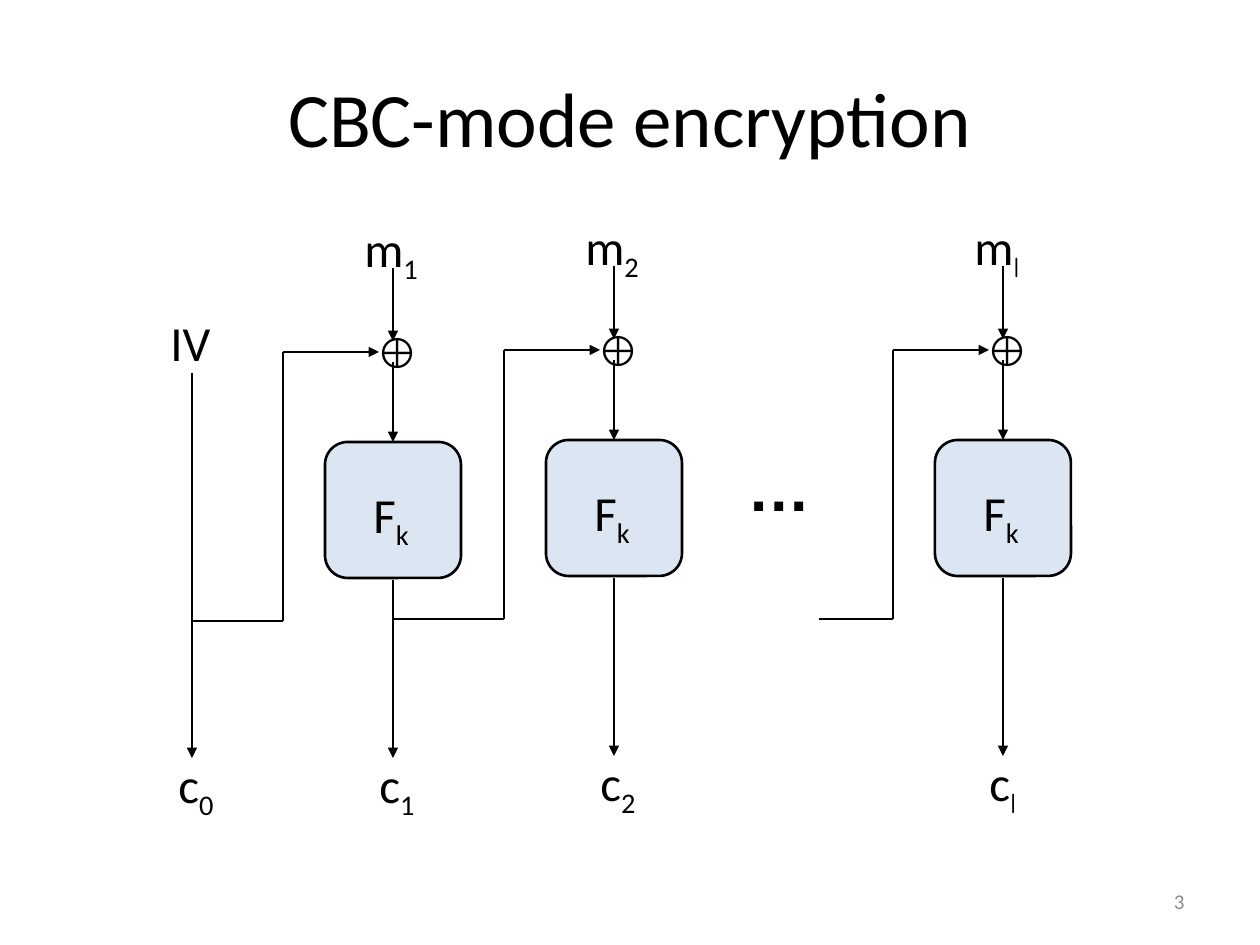
from lxml.etree import SubElement
from pptx import Presentation
from pptx.dml.color import RGBColor
from pptx.enum.shapes import MSO_CONNECTOR as Connector, MSO_SHAPE as Shape
from pptx.enum.text import MSO_ANCHOR as Anchor, MSO_AUTO_SIZE as AutoSize, PP_ALIGN as Align
from pptx.oxml.ns import qn
from pptx.util import Pt

TITLE = "CBC-mode encryption"
BLACK, BLUE, GREY = "000000", "DCE6F2", "8C8C8C"
INITIAL_X, INITIAL_DROP = 192, 2
BLOCKS = [
    {"index": "1", "axis": 393, "source": INITIAL_X, "drop": INITIAL_DROP, "font": "Calibri", "widths": (82, 63)},
    {"index": "2", "axis": 614, "source": 393, "drop": 0, "font": "Calibri", "widths": (82, 63)},
    {"index": "l", "axis": 1003, "source": 819, "drop": 0, "font": "Comic Neue", "widths": (76, 58)},
]
SIDE, BOX_TOP, OUTPUT_END = 136, 440, 756
FEED_LOW, FEED_HIGH, RISER_GAP = 619, 350, 110


def px(value):
    return round(value * 914400 / 126)


def color(code):
    return RGBColor.from_string(code)


def write(frame, text, sub="", sub_font="Calibri", size=28, font="Calibri",
          ink=BLACK, bold=False, align=Align.LEFT):
    para = frame.paragraphs[0]
    para.alignment = align
    for part, face, baseline in ((text, font, None), (sub, sub_font, "-25000")):
        if not part:
            continue
        span = para.add_run()
        span.text = part
        span.font.name = face
        span.font.size = Pt(size)
        span.font.bold = bold
        span.font.color.rgb = color(ink)
        if baseline:
            span.font._element.set("baseline", baseline)


def label(slide, x, y, width, height, text, **style):
    frame = slide.shapes.add_textbox(px(x), px(y), px(width), px(height)).text_frame
    frame.word_wrap = False
    frame.auto_size = AutoSize.SHAPE_TO_FIT_TEXT
    write(frame, text, **style)


def line(slide, x1, y1, x2, y2, arrow=False):
    link = slide.shapes.add_connector(Connector.STRAIGHT, px(x1), px(y1), px(x2), px(y2))
    link.line.width = Pt(1.5)
    link.line.color.rgb = color(BLACK)
    if arrow:
        SubElement(link.line._get_or_add_ln(), qn("a:tailEnd"), type="triangle")
    SubElement(link._element.spPr, qn("a:effectLst"))


def cipher_box(slide, axis, top):
    box = slide.shapes.add_shape(Shape.ROUNDED_RECTANGLE, px(axis - SIDE / 2), px(top), px(SIDE), px(SIDE))
    box.shadow.inherit = False
    box.fill.solid()
    box.fill.fore_color.rgb = color(BLUE)
    box.line.color.rgb = color(BLACK)
    box.line.width = Pt(1.5)
    label(slide, axis - 32, top + 36, 63, 72, "F", sub="k")


def block(slide, index, axis, source, drop, font, widths):
    top, low, high = BOX_TOP + drop, FEED_LOW + drop, FEED_HIGH + drop
    riser = axis - RISER_GAP
    cipher_box(slide, axis, top)
    label(slide, axis - 41, 210 + drop, widths[0], 72, "m", sub=index, sub_font=font)
    label(slide, axis - 26, 746 + drop, widths[1], 72, "c", sub=index, sub_font=font)
    label(slide, axis - 29, 318 + drop, 58, 64, "⊕", size=24, font="Arial")
    for start, end in ((266 + drop, 339 + drop), (360 + drop, top), (top + SIDE + 2, OUTPUT_END + drop)):
        line(slide, axis, start, axis, end, arrow=True)
    line(slide, source, low, riser, low)
    line(slide, riser, low, riser, high)
    line(slide, riser, high, axis - 14, high, arrow=True)


def main():
    deck = Presentation()
    deck.slide_width, deck.slide_height = px(1260), px(945)
    slide = deck.slides.add_slide(deck.slide_layouts[5])

    title = slide.shapes.title
    title.left, title.top, title.width, title.height = px(63), px(38), px(1134), px(157)
    title.text_frame.vertical_anchor = Anchor.MIDDLE
    write(title.text_frame, TITLE, size=44, align=Align.CENTER)

    label(slide, 158, 306, 66, 72, "IV")
    line(slide, INITIAL_X, 373, INITIAL_X, OUTPUT_END + INITIAL_DROP, arrow=True)
    label(slide, INITIAL_X - 26, 746 + INITIAL_DROP, 63, 72, "c", sub="0")
    for item in BLOCKS:
        block(slide, **item)
    label(slide, 735, 442, 89, 89, "…", size=36, font="Arial", bold=True)

    number = slide.shapes.add_textbox(px(903), px(876), px(294), px(50)).text_frame
    number.word_wrap = True
    number.vertical_anchor = Anchor.MIDDLE
    write(number, "3", size=12, ink=GREY, align=Align.RIGHT)
    deck.save("out.pptx")


if __name__ == "__main__":
    main()
